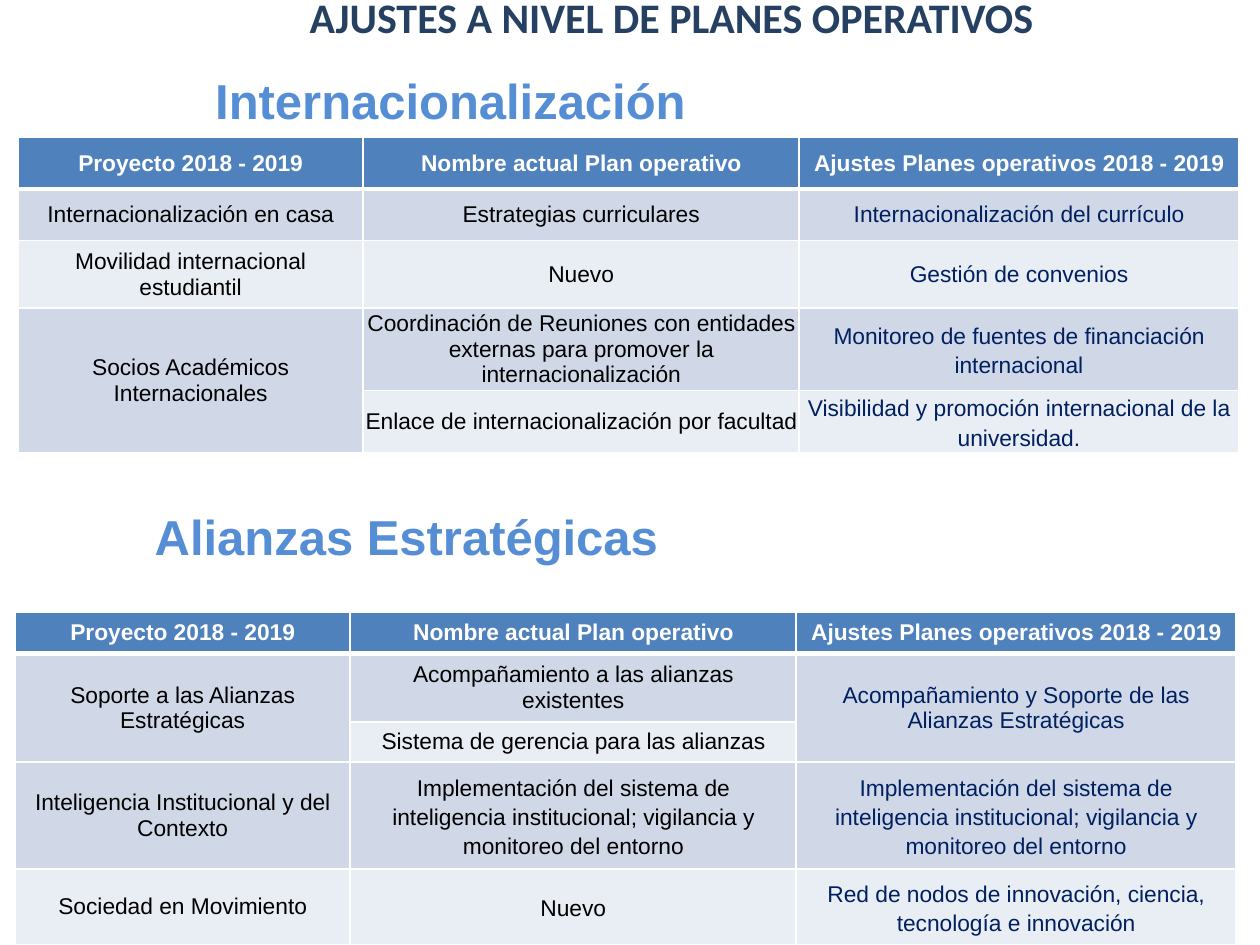
from dataclasses import dataclass

from lxml.etree import SubElement
from pptx import Presentation
from pptx.dml.color import RGBColor
from pptx.enum.text import MSO_ANCHOR as Anchor, PP_ALIGN as Align
from pptx.oxml.ns import qn
from pptx.util import Cm, Pt


@dataclass(frozen=True)
class Theme:
    """Colours, fonts and type sizes of the slide."""
    title: str = "254061"
    heading: str = "558ED5"
    header: str = "4F81BD"
    bands: tuple = ("E9EDF4", "D0D8E8")
    white: str = "FFFFFF"
    columns: tuple = ("000000", "000000", "002060")
    title_font: str = "Calibri"
    body_font: str = "Arial"
    title_size: int = 24
    heading_size: int = 28
    table_size: int = 13


@dataclass(frozen=True)
class Entry:
    """Text of a table cell with its line spacing and inner margins in cm."""
    text: str
    spacing: float = 1.0
    side: float = 0.25
    edge: float = 0.13


THEME = Theme()
HEADERS = ("Proyecto 2018 - 2019", "Nombre actual Plan operativo", "Ajustes Planes operativos 2018 - 2019")
SYSTEM = Entry("Implementación del sistema de inteligencia institucional; "
               "vigilancia y monitoreo del entorno", spacing=1.15)
INTERNATIONAL = (
    ("Internacionalización en casa", "Estrategias curriculares", "Internacionalización del currículo"),
    ("Movilidad internacional estudiantil", "Nuevo", "Gestión de convenios"),
    ("Socios Académicos Internacionales",
     Entry("Coordinación de Reuniones con entidades externas para promover la internacionalización",
           side=0, edge=0),
     Entry("Monitoreo de fuentes de financiación internacional", 1.15, 0.13, 0)),
    (None,
     Entry("Enlace de internacionalización por facultad", side=0, edge=0),
     Entry("Visibilidad y promoción internacional de la universidad.", 1.15, 0.13, 0)),
)
ALLIANCES = (
    ("Soporte a las Alianzas Estratégicas", "Acompañamiento a las alianzas existentes",
     "Acompañamiento y Soporte de las Alianzas Estratégicas"),
    (None, "Sistema de gerencia para las alianzas", None),
    ("Inteligencia Institucional y del Contexto", SYSTEM, SYSTEM),
    ("Sociedad en Movimiento", Entry("Nuevo", spacing=1.15),
     Entry("Red de nodos de innovación, ciencia, tecnología e innovación", spacing=1.15)),
)


def write_text(frame, text, *, size, color, font=THEME.body_font, bold=False,
               align=Align.LEFT, spacing=1.0):
    """Write one formatted paragraph into a text frame."""
    frame.word_wrap = True
    paragraph = frame.paragraphs[0]
    paragraph.alignment = align
    paragraph.line_spacing = spacing
    run = paragraph.add_run()
    run.text = text
    run.font.name = font
    run.font.size = Pt(size)
    run.font.bold = bold
    run.font.color.rgb = RGBColor.from_string(color)


def add_text(slide, box, text, *, anchor=Anchor.TOP, **formats):
    """Add a text box in the given box."""
    frame = slide.shapes.add_textbox(*map(Cm, box)).text_frame
    frame.vertical_anchor = anchor
    write_text(frame, text, **formats)


def set_borders(cell, bottom):
    """Draw white cell borders with the given bottom width in points."""
    properties = cell._tc.get_or_add_tcPr()
    for index, (tag, width) in enumerate((("lnL", 1), ("lnR", 1), ("lnT", 1), ("lnB", bottom))):
        line = properties.makeelement(qn(f"a:{tag}"), {"w": str(Pt(width))})
        fill = SubElement(line, qn("a:solidFill"))
        SubElement(fill, qn("a:srgbClr"), val=THEME.white)
        properties.insert(index, line)


def style_cell(cell, fill, bottom=1):
    """Give a cell its fill and borders."""
    cell.fill.solid()
    cell.fill.fore_color.rgb = RGBColor.from_string(fill)
    set_borders(cell, bottom)


def fill_cell(cell, entry, *, color, bold=False):
    """Write a centred entry into a cell."""
    cell.vertical_anchor = Anchor.MIDDLE
    cell.margin_left = cell.margin_right = Cm(entry.side)
    cell.margin_top = cell.margin_bottom = Cm(entry.edge)
    write_text(cell.text_frame, entry.text, size=THEME.table_size, color=color,
               bold=bold, align=Align.CENTER, spacing=entry.spacing)


def add_plan_table(slide, left, top, widths, heights, body):
    """Add a banded table of plans, where None continues the cell above."""
    rows = (HEADERS, *body)
    box = map(Cm, (left, top, sum(widths), sum(heights)))
    table = slide.shapes.add_table(len(rows), len(widths), *box).table
    for column, width in zip(table.columns, widths):
        column.width = Cm(width)
    for row, height in zip(table.rows, heights):
        row.height = Cm(height)
    for i, row in enumerate(rows):
        header = i == 0
        for j, item in enumerate(row):
            cell = table.cell(i, j)
            style_cell(cell, THEME.header if header else THEME.bands[i % 2], 3 if header else 1)
            if item is None:
                table.cell(i - 1, j).merge(cell)
                continue
            entry = item if isinstance(item, Entry) else Entry(item)
            fill_cell(cell, entry, color=THEME.white if header else THEME.columns[j], bold=header)


def add_section(slide, heading, heading_at, table_at, widths, heights, body):
    """Add a heading and the table that belongs to it."""
    add_text(slide, (*heading_at, 18.34, 1.45), heading, size=THEME.heading_size,
             color=THEME.heading, bold=True)
    add_plan_table(slide, *table_at, widths, heights, body)


def main():
    """Build and save the presentation."""
    presentation = Presentation()
    presentation.slide_width, presentation.slide_height = Cm(25.4), Cm(19.05)
    slide = presentation.slides.add_slide(presentation.slide_layouts[6])
    add_text(slide, (2.11, -0.28, 22.86, 1.24), "AJUSTES A NIVEL DE PLANES OPERATIVOS",
             anchor=Anchor.MIDDLE, size=THEME.title_size, color=THEME.title,
             font=THEME.title_font, bold=True, align=Align.CENTER)
    add_section(slide, "Internacionalización", (4.09, 1.3), (0.36, 2.77),
                (6.96, 8.79, 8.86), (1.04, 1.04, 1.35, 1.65, 1.25), INTERNATIONAL)
    add_section(slide, "Alianzas Estratégicas", (2.87, 10.08), (0.3, 12.34),
                (6.76, 8.99, 8.86), (0.84, 1.37, 0.81, 2.13, 1.52), ALLIANCES)
    presentation.save("out.pptx")


if __name__ == "__main__":
    main()
